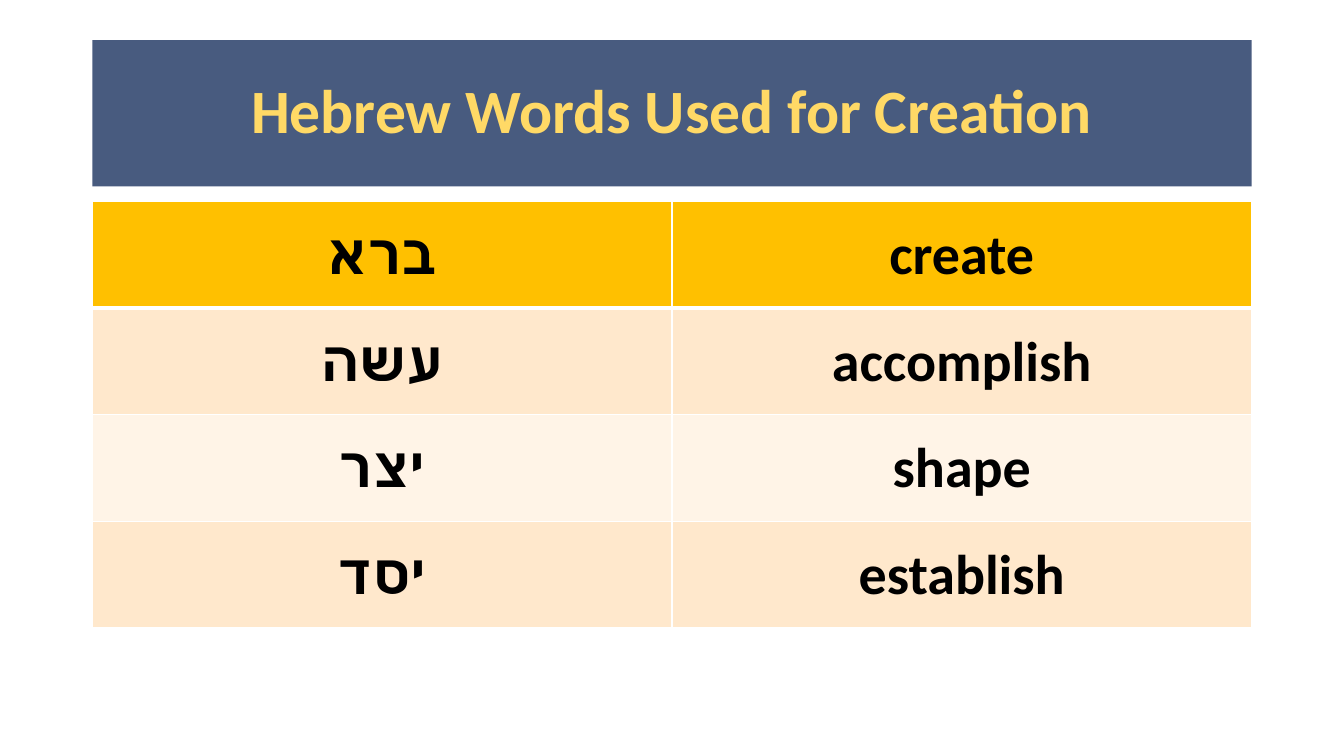
from lxml.etree import SubElement
from pptx import Presentation
from pptx.dml.color import RGBColor
from pptx.enum.text import MSO_ANCHOR, PP_ALIGN
from pptx.oxml.ns import qn
from pptx.util import Pt

COLORS = {
    "navy": "203864", "yellow": "FFD966", "gold": "FFC000", "black": "000000",
    "peach": "FFE8CC", "cream": "FFF4E7", "white": "FFFFFF",
}
WORDS = [("ברא", "create"), ("עשה", "accomplish"), ("יצר", "shape"), ("יסד", "establish")]
LEFT, WIDTH = 66, 828
ROW_HEIGHT = 76.14


class SlideBuilder:
    """Hold the style and the current slide."""

    def __init__(self, presentation):
        """Add a slide that has only a title."""
        self.font_name = "Calibri"
        self.slide = presentation.slides.add_slide(presentation.slide_layouts[5])

    def format_text(self, paragraph, text, size, color):
        """Write centred bold text into a paragraph."""
        paragraph.alignment = PP_ALIGN.CENTER
        run = paragraph.add_run()
        run.text = text
        for name, value in {"name": self.font_name, "size": Pt(size), "bold": True}.items():
            setattr(run.font, name, value)
        run.font.color.rgb = RGBColor.from_string(COLORS[color])
        SubElement(run.font._element, qn("a:cs"), typeface=self.font_name)

    def title(self, text, top, height):
        """Place the title on a translucent band."""
        shape = self.slide.shapes.title
        bounds = {"left": LEFT, "top": top, "width": WIDTH, "height": height}
        for name, value in bounds.items():
            setattr(shape, name, Pt(value))
        shape.fill.solid()
        shape.fill.fore_color.rgb = RGBColor.from_string(COLORS["navy"])
        color = shape.fill._xPr.find(qn("a:solidFill"))[0]
        SubElement(color, qn("a:alpha"), val="82000")
        shape.text_frame.vertical_anchor = MSO_ANCHOR.MIDDLE
        shape.text_frame.word_wrap = True
        paragraph = shape.text_frame.paragraphs[0]
        paragraph.line_spacing = 0.9
        self.format_text(paragraph, text, 44, "yellow")

    def border(self, cell, side, width):
        """Draw one white cell border."""
        properties = cell._tc.get_or_add_tcPr()
        line = SubElement(properties, qn(f"a:{side}"), w=str(Pt(width)))
        fill = SubElement(line, qn("a:solidFill"))
        SubElement(fill, qn("a:srgbClr"), val=COLORS["white"])

    def cell(self, cell, text, fill, widths, right_to_left):
        """Format one table cell and its text."""
        formats = {
            "margin_left": Pt(0.75), "margin_right": Pt(0.75), "margin_top": Pt(0.75),
            "margin_bottom": 0, "vertical_anchor": MSO_ANCHOR.MIDDLE,
        }
        for name, value in formats.items():
            setattr(cell, name, value)
        for side, width in widths.items():
            self.border(cell, side, width)
        cell.fill.solid()
        cell.fill.fore_color.rgb = RGBColor.from_string(COLORS[fill])
        paragraph = cell.text_frame.paragraphs[0]
        if right_to_left:
            paragraph._p.get_or_add_pPr().set("rtl", "1")
        self.format_text(paragraph, text, 40, "black")

    def table(self, rows, top):
        """Add the word table with a gold first row and banded rows below."""
        frame = self.slide.shapes.add_table(
            len(rows), 2, Pt(LEFT), Pt(top), Pt(WIDTH), Pt(ROW_HEIGHT * len(rows)))
        for row_index, words in enumerate(rows):
            fill = "gold" if row_index == 0 else ("cream", "peach")[row_index % 2]
            widths = {"lnL": 1, "lnR": 1, "lnT": 3 if row_index == 1 else 1,
                      "lnB": 3 if row_index == 0 else 1}
            for column_index, word in enumerate(words):
                self.cell(frame.table.cell(row_index, column_index), word, fill,
                          widths, column_index == 0)


def main():
    """Build and save the slide."""
    presentation = Presentation()
    presentation.slide_width, presentation.slide_height = Pt(960), Pt(540)
    builder = SlideBuilder(presentation)
    builder.title("Hebrew Words Used for Creation", 28.75, 104.4)
    builder.table(WORDS, 144)
    presentation.save("out.pptx")


if __name__ == "__main__":
    main()
